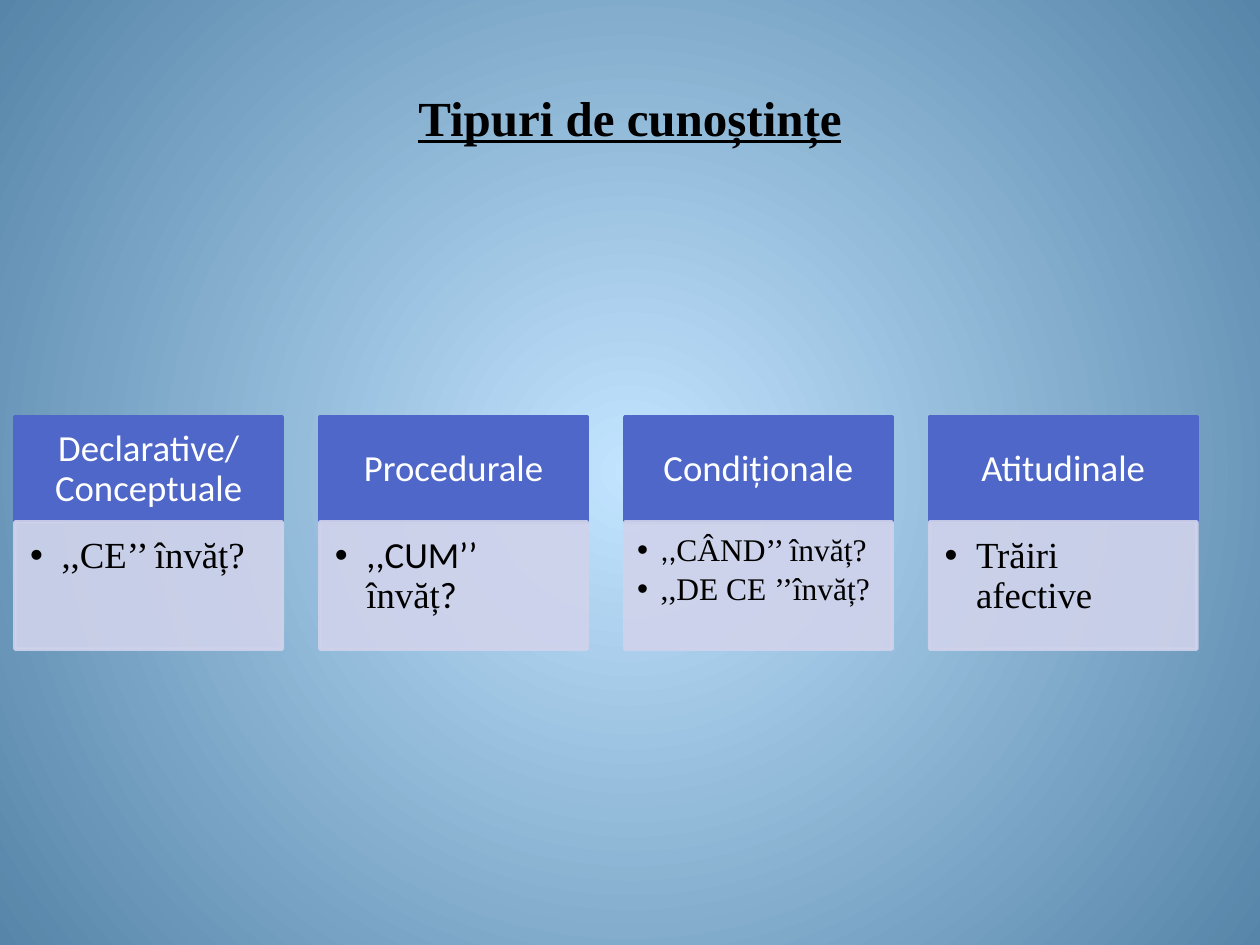
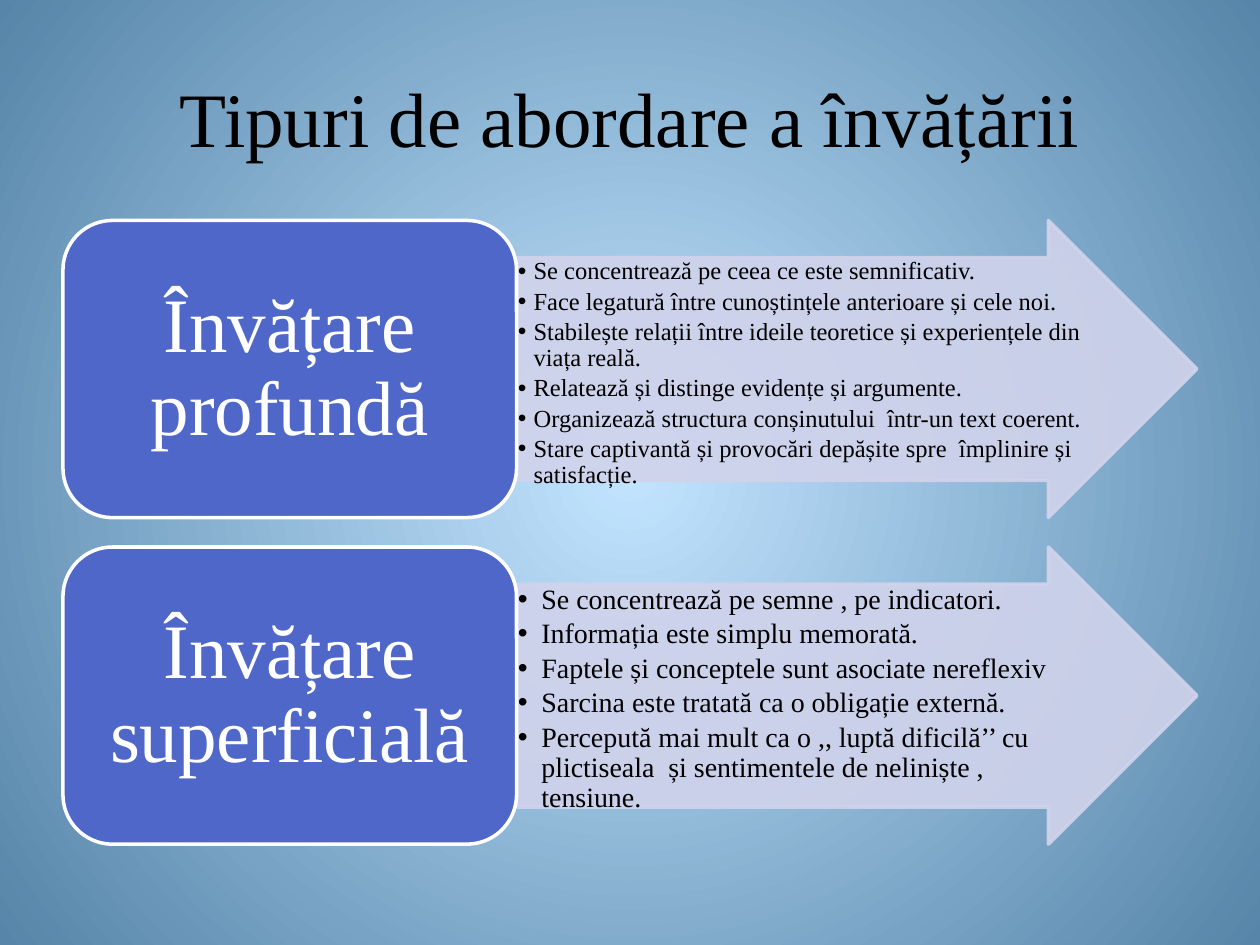
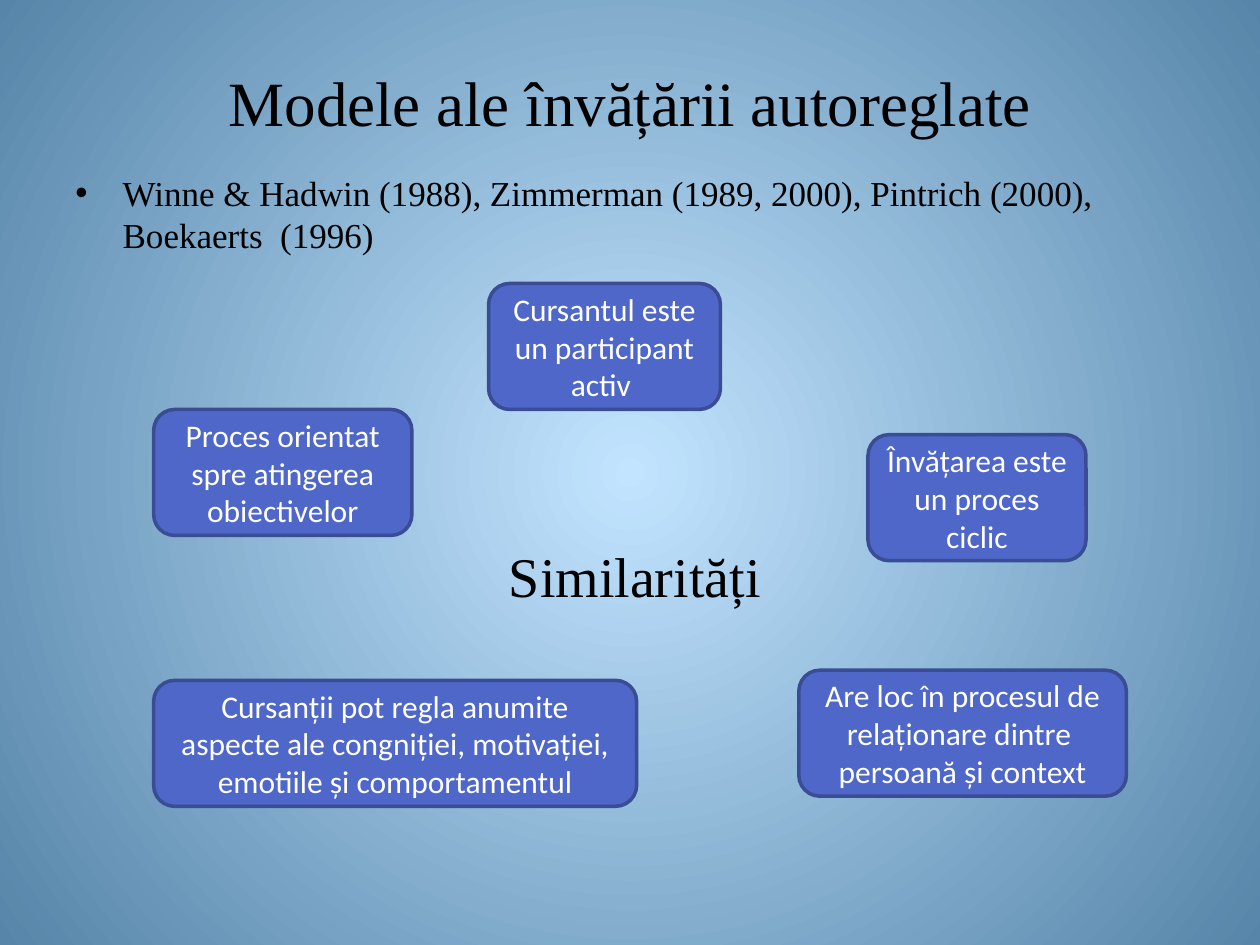
"""Builds three slides about kinds of knowledge and approaches to learning."""
from dataclasses import dataclass, field
from typing import Any

from lxml import etree
from pptx import Presentation
from pptx.dml.color import RGBColor
from pptx.enum.shapes import MSO_SHAPE
from pptx.enum.text import MSO_ANCHOR, MSO_AUTO_SIZE, PP_ALIGN
from pptx.oxml.ns import qn
from pptx.util import Pt

RECTANGLE = MSO_SHAPE.RECTANGLE
ROUNDED = MSO_SHAPE.ROUNDED_RECTANGLE
ARROW = MSO_SHAPE.RIGHT_ARROW
CENTER, LEFT = PP_ALIGN.CENTER, PP_ALIGN.LEFT
MIDDLE, TOP = MSO_ANCHOR.MIDDLE, MSO_ANCHOR.TOP
FIT_SHAPE = MSO_AUTO_SIZE.SHAPE_TO_FIT_TEXT

SERIF, SANS = "Times New Roman", "Calibri"
BLACK, WHITE = "000000", "FFFFFF"
INDIGO, NAVY, LAVENDER = "4E67C8", "3A4C94", "D0D3EB"
GLOW, STEEL = "C2E4FF", "5685A9"


@dataclass(frozen=True)
class Frame:
    """Position and size in points."""

    left: float
    top: float
    width: float
    height: float

    def lengths(self) -> tuple:
        """Return the four values as lengths."""
        return Pt(self.left), Pt(self.top), Pt(self.width), Pt(self.height)


@dataclass(frozen=True)
class Span:
    """Text with a typeface of its own."""

    text: str
    font: str


@dataclass(frozen=True)
class TextStyle:
    """Look of the text in one box."""

    size: float
    font: str = SERIF
    color: str = BLACK
    align: Any = CENTER
    anchor: Any = MIDDLE
    insets: tuple[float, float, float, float] = (7.2, 3.6, 7.2, 3.6)
    bullet_indent: float = 0
    para_format: dict = field(default_factory=dict)
    font_format: dict = field(default_factory=dict)


@dataclass(frozen=True)
class ShapeStyle:
    """Look of a filled outline."""

    preset: Any
    fill: str
    line: str
    opacity: int = 100
    adjustments: tuple[float, ...] = ()


@dataclass(frozen=True)
class Knowledge:
    """One column of the knowledge slide."""

    heading: str
    paras: list
    style: TextStyle


@dataclass(frozen=True)
class Approach:
    """One row of the approaches slide."""

    heading: str
    traits: list[str]
    style: TextStyle


def rgb(color: str) -> RGBColor:
    """Turn a hex string into a colour."""
    return RGBColor.from_string(color)


def apply_format(target: Any, values: dict) -> None:
    """Set every attribute named in the dict."""
    for name, value in values.items():
        setattr(target, name, value)


def add_bullet(para: Any, indent: float) -> None:
    """Give a paragraph a round bullet with a hanging indent."""
    properties = para._p.get_or_add_pPr()
    properties.set("marL", str(Pt(indent)))
    properties.set("indent", str(-Pt(indent)))
    etree.SubElement(properties, qn("a:buFont")).set("typeface", "Arial")
    etree.SubElement(properties, qn("a:buChar")).set("char", "•")


def write_text(box: Any, paras: list, style: TextStyle) -> None:
    """Fill a box with paragraphs, each a string or a list of spans."""
    frame = box.text_frame
    sides = ("margin_left", "margin_top", "margin_right", "margin_bottom")
    apply_format(frame, {"word_wrap": True, "vertical_anchor": style.anchor})
    apply_format(frame, dict(zip(sides, map(Pt, style.insets))))
    for index, content in enumerate(paras):
        para = frame.add_paragraph() if index else frame.paragraphs[0]
        apply_format(para, {"alignment": style.align, **style.para_format})
        if style.bullet_indent:
            add_bullet(para, style.bullet_indent)
        spans = [Span(content, style.font)] if isinstance(content, str) else content
        for span in spans:
            run = para.add_run()
            run.text = span.text
            apply_format(run.font, {"name": span.font, "size": Pt(style.size), **style.font_format})
            run.font.color.rgb = rgb(style.color)


def add_text(page: Any, place: Frame, text: str, style: TextStyle) -> Any:
    """Add a text box with one paragraph."""
    box = page.shapes.add_textbox(*place.lengths())
    write_text(box, [text], style)
    return box


def add_panel(page: Any, place: Frame, look: ShapeStyle, paras: list, style: TextStyle) -> None:
    """Add a filled shape with text."""
    box = page.shapes.add_shape(look.preset, *place.lengths())
    box.shadow.inherit = False
    box.fill.solid()
    box.fill.fore_color.rgb = rgb(look.fill)
    box.line.color.rgb = rgb(look.line)
    box.line.width = Pt(2)
    for index, value in enumerate(look.adjustments):
        box.adjustments[index] = value
    if look.opacity < 100:
        for color in box.element.xpath("./p:spPr//a:srgbClr"):
            etree.SubElement(color, qn("a:alpha")).set("val", str(look.opacity * 1000))
    write_text(box, paras, style)


def bullet_style(size: float, indent: float, insets: tuple) -> TextStyle:
    """Return the style of a tight bulleted list."""
    spacing = {"level": 1, "line_spacing": 0.9, "space_after": Pt(size * 0.15)}
    return TextStyle(size, align=LEFT, anchor=TOP, insets=insets,
                     bullet_indent=indent, para_format=spacing)


TITLE_FRAME = Frame(36, 21.6, 648, 90)
TIGHT = {"line_spacing": 0.9}
COLUMN_HEAD = TextStyle(21, SANS, WHITE, insets=(11.5, 6.5, 11.5, 6.5), para_format=TIGHT)
ROW_HEAD = TextStyle(44, color=WHITE, insets=(13, 6.5, 13, 6.5), para_format=TIGHT)
NOTE = TextStyle(18, SANS, WHITE)
LARGE_LIST = bullet_style(21, 18, (8.6, 8.6, 11.5, 13))
SMALL_LIST = bullet_style(18, 13.5, (7.2, 7.2, 10, 11.5))
ARROW_INSETS = (0.7, 0.7, 0.7, 0.7)

HEAD_SHAPE = ShapeStyle(RECTANGLE, INDIGO, INDIGO)
BODY_SHAPE = ShapeStyle(RECTANGLE, LAVENDER, LAVENDER, 90)
ARROW_SHAPE = ShapeStyle(ARROW, LAVENDER, LAVENDER, 90, (0.75, 0.5))
ROW_SHAPE = ShapeStyle(ROUNDED, INDIGO, WHITE)
NOTE_SHAPE = ShapeStyle(ROUNDED, INDIGO, NAVY)

KNOWLEDGE = [
    Knowledge("Declarative/ Conceptuale", [",,CE’’ învăț?"], LARGE_LIST),
    Knowledge("Procedurale",
              [[Span(",,CUM’’ ", SANS), Span("învăț", SERIF), Span("?", SANS)]], LARGE_LIST),
    Knowledge("Condiționale",
              [[Span(",,", SANS), Span("CÂND’’ învăț?", SERIF)], ",,DE CE ’’învăț?"], SMALL_LIST),
    Knowledge("Atitudinale", ["Trăiri afective"], LARGE_LIST),
]

APPROACHES = [
    Approach("Învățare profundă", [
        "Se concentrează pe ceea ce este semnificativ.",
        "Face legatură între cunoștințele anterioare și cele noi.",
        "Stabilește relații între ideile teoretice și experiențele din viața reală.",
        "Relatează și distinge evidențe și argumente.",
        "Organizează structura conșinutului  într-un text coerent.",
        "Stare captivantă și provocări depășite spre  împlinire și satisfacție.",
    ], bullet_style(14, 9, ARROW_INSETS)),
    Approach("Învățare superficială", [
        "Se concentrează pe semne , pe indicatori.",
        "Informația este simplu memorată.",
        "Faptele și conceptele sunt asociate nereflexiv",
        "Sarcina este tratată ca o obligație externă.",
        "Percepută mai mult ca o ,, luptă dificilă’’ cu plictiseala  și sentimentele"
        " de neliniște , tensiune.",
    ], bullet_style(16, 13.5, ARROW_INSETS)),
]

SIMILARITIES = [
    (Frame(87.8, 388.8, 276, 72),
     "Cursanții pot regla anumite aspecte ale congniției, motivației, emotiile și comportamentul"),
    (Frame(87.8, 234, 147.6, 72), "Proces orientat spre atingerea obiectivelor"),
    (Frame(496, 248.4, 124.6, 72), "Învățarea este un proces ciclic"),
    (Frame(456.5, 383, 187.2, 72), "Are loc în procesul de relaționare dintre  persoană și context"),
    (Frame(279.2, 162, 132.5, 72), "Cursantul este un participant activ "),
]


def paint_background(deck: Any) -> None:
    """Give the master a radial gradient."""
    master = deck.slide_master
    fill = master.background.fill
    fill.gradient()
    for stop, position, color in zip(fill.gradient_stops, (0, 1), (GLOW, STEEL)):
        stop.position = position
        stop.color.rgb = rgb(color)
    gradient = master.element.xpath(".//p:bgPr/a:gradFill")[0]
    gradient.remove(gradient.find(qn("a:lin")))
    circle = etree.SubElement(gradient, qn("a:path"))
    circle.set("path", "circle")
    center = etree.SubElement(circle, qn("a:fillToRect"))
    for side in "ltrb":
        center.set(side, "50000")


def build_knowledge(page: Any) -> None:
    """Draw the four kinds of knowledge as columns."""
    add_text(page, TITLE_FRAME, "Tipuri de cunoștințe",
             TextStyle(28, font_format={"bold": True, "underline": True}))
    left, top, width, pitch = 8.6, 238.4, 152.8, 174.2
    head_height, body_height = 59.8, 72.7
    for index, kind in enumerate(KNOWLEDGE):
        x = left + index * pitch
        add_panel(page, Frame(x, top, width, head_height), HEAD_SHAPE, [kind.heading], COLUMN_HEAD)
        add_panel(page, Frame(x, top + head_height, width, body_height),
                  BODY_SHAPE, kind.paras, kind.style)


def build_approaches(page: Any) -> None:
    """Draw the two approaches as rows with arrows."""
    add_text(page, TITLE_FRAME, "Tipuri de abordare a învățării", TextStyle(44))
    left, top, height, pitch = 36, 126, 169.8, 186.6
    head_width, arrow_width = 259.2, 388.8
    for index, approach in enumerate(APPROACHES):
        y = top + index * pitch
        add_panel(page, Frame(left + head_width, y, arrow_width, height),
                  ARROW_SHAPE, approach.traits, approach.style)
        add_panel(page, Frame(left, y, head_width, height),
                  ROW_SHAPE, [approach.heading], ROW_HEAD)


def build_models(page: Any) -> None:
    """Draw the similarities between the learning models."""
    add_text(page, Frame(36, 21.6, 648, 72.7), "Modele ale învățării autoreglate", TextStyle(36))
    add_text(page, Frame(36, 94.3, 648, 388),
             "Winne & Hadwin (1988), Zimmerman (1989, 2000), Pintrich (2000), Boekaerts  (1996)",
             TextStyle(20, align=LEFT, anchor=TOP, bullet_indent=27,
                       para_format={"space_before": Pt(4)}))
    label = add_text(page, Frame(283.7, 306, 159.8, 46), "Similarități",
                     TextStyle(32, align=LEFT, anchor=TOP))
    apply_format(label.text_frame, {"word_wrap": False, "auto_size": FIT_SHAPE})
    for place, text in SIMILARITIES:
        add_panel(page, place, NOTE_SHAPE, [text], NOTE)


def main() -> None:
    """Build the deck and save it."""
    deck = Presentation()
    deck.slide_width, deck.slide_height = Pt(720), Pt(540)
    paint_background(deck)
    blank = deck.slide_layouts[6]
    for build in (build_knowledge, build_approaches, build_models):
        build(deck.slides.add_slide(blank))
    deck.save("out.pptx")


if __name__ == "__main__":
    main()
